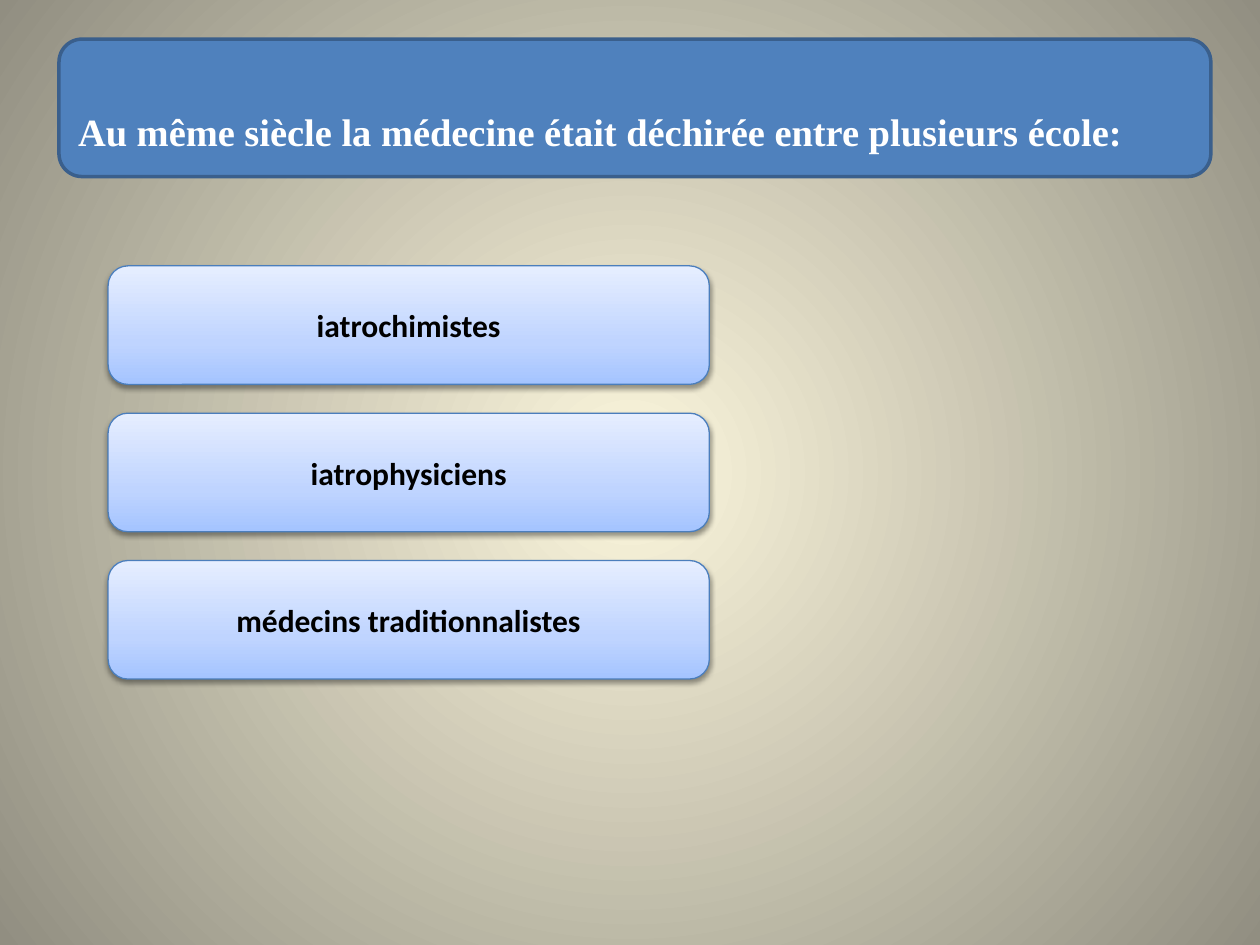
from dataclasses import dataclass

from lxml import etree
from pptx import Presentation
from pptx.dml.color import RGBColor
from pptx.enum.shapes import MSO_SHAPE
from pptx.enum.text import MSO_ANCHOR, PP_ALIGN
from pptx.oxml import parse_xml
from pptx.oxml.ns import nsdecls, qn
from pptx.util import Cm, Pt

ROUNDED = MSO_SHAPE.ROUNDED_RECTANGLE
MIDDLE = MSO_ANCHOR.MIDDLE
CENTER, JUSTIFY = PP_ALIGN.CENTER, PP_ALIGN.JUSTIFY

TITLE = "Au même siècle la médecine était déchirée entre plusieurs école:"
SCHOOLS = ["iatrochimistes", "iatrophysiciens", "médecins traditionnalistes"]

TITLE_BOX = (1.19, 0.79, 23.22, 2.77)
SCHOOL_LEFT, SCHOOL_TOP = 2.18, 5.36
SCHOOL_WIDTH, SCHOOL_HEIGHT, SCHOOL_STEP = 12.12, 2.39, 2.97


@dataclass(frozen=True)
class Theme:
    title_font: str = "Times New Roman"
    title_size: int = 22
    title_text: str = "FFFFFF"
    title_fill: str = "4F81BD"
    title_line: str = "3A5F8C"
    school_font: str = "Calibri"
    school_size: int = 18
    school_text: str = "000000"
    school_line: str = "4B7EBC"
    school_stops: tuple = ((0, "A4C4FF"), (35, "BFD4FF"), (100, "E6EEFF"))
    back_stops: tuple = ((0, "FCF7DD"), (100, "918E81"))


THEME = Theme()
UPWARD = '<a:lin ang="16200000" scaled="0"/>'
RADIAL = ('<a:path path="circle"><a:fillToRect l="50000" t="50000" '
          'r="50000" b="50000"/></a:path>')


def set_gradient(props, stops, direction):
    items = "".join(
        f'<a:gs pos="{pos * 1000}"><a:srgbClr val="{color}"/></a:gs>'
        for pos, color in stops)
    grad = parse_xml(f'<a:gradFill {nsdecls("a")} rotWithShape="1">'
                     f'<a:gsLst>{items}</a:gsLst>{direction}</a:gradFill>')
    props.replace(props.find(qn("a:solidFill")), grad)


def add_shadow(sp):
    effects = sp.element.spPr.find(qn("a:effectLst"))
    shadow = etree.SubElement(effects, qn("a:outerShdw"), blurRad="40000",
                              dist="20000", dir="5400000", rotWithShape="0")
    color = etree.SubElement(shadow, qn("a:srgbClr"), val="000000")
    etree.SubElement(color, qn("a:alpha"), val="38000")


def add_box(s, box, text, fill, line, width, font, size, color, align):
    sp = s.shapes.add_shape(ROUNDED, *(Cm(v) for v in box))
    sp.shadow.inherit = False
    sp.fill.solid()
    sp.fill.fore_color.rgb = RGBColor.from_string(fill)
    sp.line.color.rgb = RGBColor.from_string(line)
    sp.line.width = Pt(width)
    tf = sp.text_frame
    tf.word_wrap = True
    tf.vertical_anchor = MIDDLE
    p = tf.paragraphs[0]
    p.text = text
    p.alignment = align
    p.font.name = font
    p.font.size = Pt(size)
    p.font.bold = True
    p.font.color.rgb = RGBColor.from_string(color)
    return sp


def main():
    """Build the slide on the rival schools of medicine."""
    prs = Presentation()
    prs.slide_width, prs.slide_height = Cm(25.4), Cm(19.05)
    s = prs.slides.add_slide(prs.slide_layouts[6])
    s.background.fill.solid()
    set_gradient(s.element.find(".//" + qn("p:bgPr")), THEME.back_stops, RADIAL)

    title = add_box(s, TITLE_BOX, TITLE, THEME.title_fill, THEME.title_line, 2,
                    THEME.title_font, THEME.title_size, THEME.title_text, JUSTIFY)
    title.text_frame.paragraphs[0].line_spacing = 2.0

    for i, school in enumerate(SCHOOLS):
        box = (SCHOOL_LEFT, SCHOOL_TOP + i * SCHOOL_STEP, SCHOOL_WIDTH, SCHOOL_HEIGHT)
        sp = add_box(s, box, school, THEME.school_stops[0][1], THEME.school_line, 0.75,
                     THEME.school_font, THEME.school_size, THEME.school_text, CENTER)
        set_gradient(sp.element.spPr, THEME.school_stops, UPWARD)
        add_shadow(sp)

    prs.save("out.pptx")


if __name__ == "__main__":
    main()
